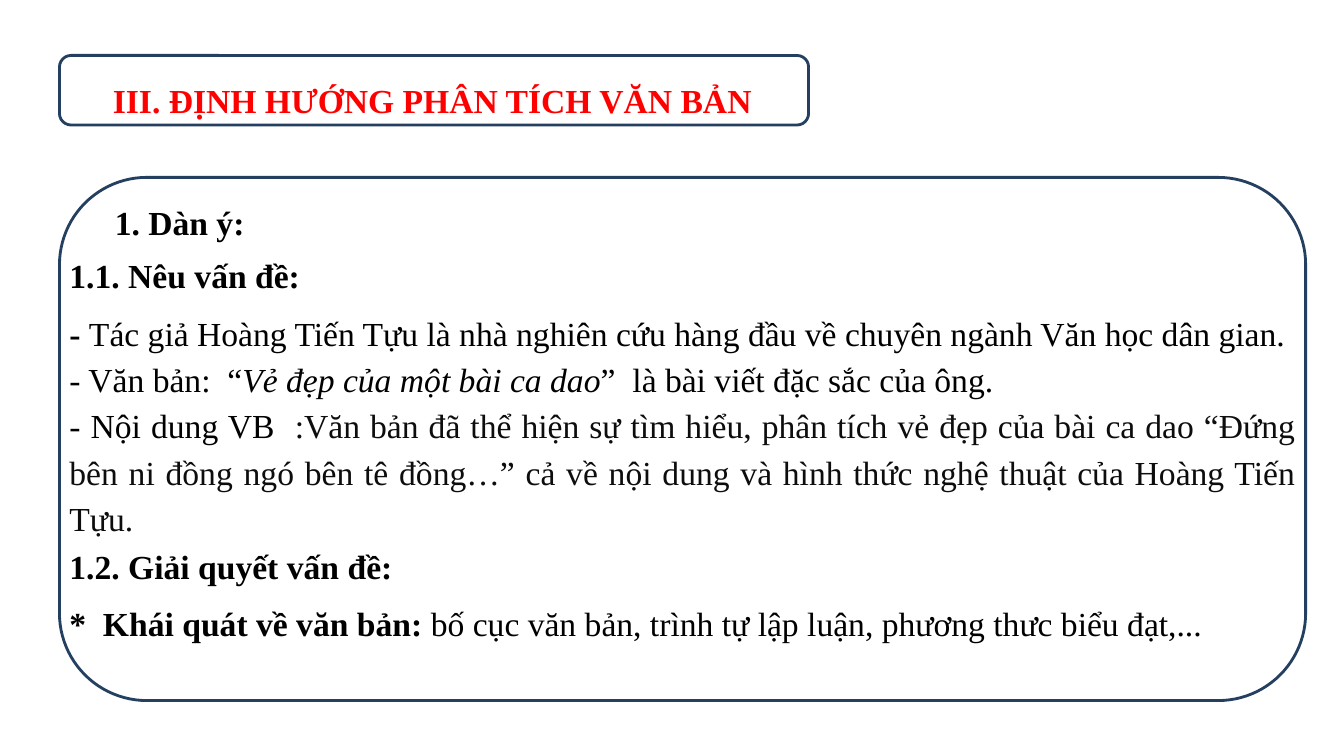
from pptx import Presentation
from pptx.dml.color import RGBColor
from pptx.enum.shapes import MSO_SHAPE
from pptx.enum.text import MSO_AUTO_SIZE, PP_ALIGN
from pptx.util import Inches, Pt

ROUNDED = MSO_SHAPE.ROUNDED_RECTANGLE
JUSTIFY = PP_ALIGN.JUSTIFY
GROW = MSO_AUTO_SIZE.SHAPE_TO_FIT_TEXT
FONT = "Times New Roman"
COLORS = {"frame": "243F60", "title": "FF0000", "text": "000000", "soft": "0D0D0D"}
LINE_H = 0.53
HEADING_W = 6.66


def add_frame(s, x, y, w, h):
    """Draw an unfilled rounded frame."""
    sp = s.shapes.add_shape(ROUNDED, Inches(x), Inches(y), Inches(w), Inches(h))
    sp.shadow.inherit = False
    sp.adjustments[0] = 0.167
    sp.fill.background()
    sp.line.color.rgb = RGBColor.from_string(COLORS["frame"])
    sp.line.width = Pt(2)


def add_run(p, text, bold=False, italic=False, color="text"):
    """Append one formatted run to a paragraph."""
    r = p.add_run()
    r.text = text
    r.font.name = FONT
    r.font.size = Pt(24)
    r.font.bold = bold
    r.font.italic = italic
    r.font.color.rgb = RGBColor.from_string(COLORS[color])


def add_text(s, x, y, w, h, paragraphs, space_after=0):
    """Place a text box whose paragraphs are lists of (text, format) runs."""
    tf = s.shapes.add_textbox(Inches(x), Inches(y), Inches(w), Inches(h)).text_frame
    tf.word_wrap = True
    tf.auto_size = GROW
    for i, runs in enumerate(paragraphs):
        p = tf.paragraphs[0] if i == 0 else tf.add_paragraph()
        p.alignment = JUSTIFY
        p.line_spacing = 1.15
        p.space_after = Pt(space_after)
        for text, fmt in runs:
            add_run(p, text, **fmt)


def add_title(s, x, y, w, h):
    """Build the framed section title."""
    add_frame(s, x, y, w, h)
    title = ("III. ĐỊNH HƯỚNG PHÂN TÍCH VĂN BẢN", {"bold": True, "color": "title"})
    add_text(s, x + 0.43, y + 0.13, 6.69, LINE_H, [[title]], space_after=10)


def add_outline(s, x, y, w, h):
    """Build the framed outline with its headings and body text."""
    add_frame(s, x, y, w, h)
    bold = {"bold": True}
    headings = [
        (0.45, 0.13, "1. Dàn ý:"),
        (0, 0.66, "1.1. Nêu vấn đề:"),
        (0, 3.55, "1.2. Giải quyết vấn đề:"),
    ]
    for dx, dy, text in headings:
        add_text(s, x + dx, y + dy, HEADING_W, LINE_H, [[(text, bold)]])
    add_text(s, x, y + 1.23, w, 2.39, [
        [("- ", bold),
         ("Tác giả Hoàng Tiến Tựu là nhà nghiên cứu hàng đầu về chuyên ngành "
          "Văn học dân gian.", {})],
        [("- Văn bản:  “", {}),
         ("Vẻ đẹp của một bài ca dao", {"italic": True}),
         ("”  là bài viết đặc sắc của ông.", {})],
        [("- Nội dung VB  ", {}),
         (":Văn bản đã thể hiện sự tìm hiểu, phân tích vẻ đẹp của bài ca dao "
          "“Đứng bên ni đồng ngó bên tê đồng…” cả về nội dung và hình thức "
          "nghệ thuật của Hoàng Tiến Tựu.", {"color": "soft"})],
    ])
    add_text(s, x, y + 4.11, w - 0.2, LINE_H, [
        [("*  Khái quát về văn bản: ", bold),
         ("bố cục văn bản, trình tự lập luận, phương thưc biểu đạt,...", {})],
    ])


def main():
    """Create the presentation and save it."""
    prs = Presentation()
    prs.slide_width = Inches(13.33)
    prs.slide_height = Inches(7.5)
    s = prs.slides.add_slide(prs.slide_layouts[6])
    add_title(s, 0.59, 0.55, 7.43, 0.69)
    add_outline(s, 0.59, 1.76, 12.36, 5.19)
    prs.save("out.pptx")


if __name__ == "__main__":
    main()
